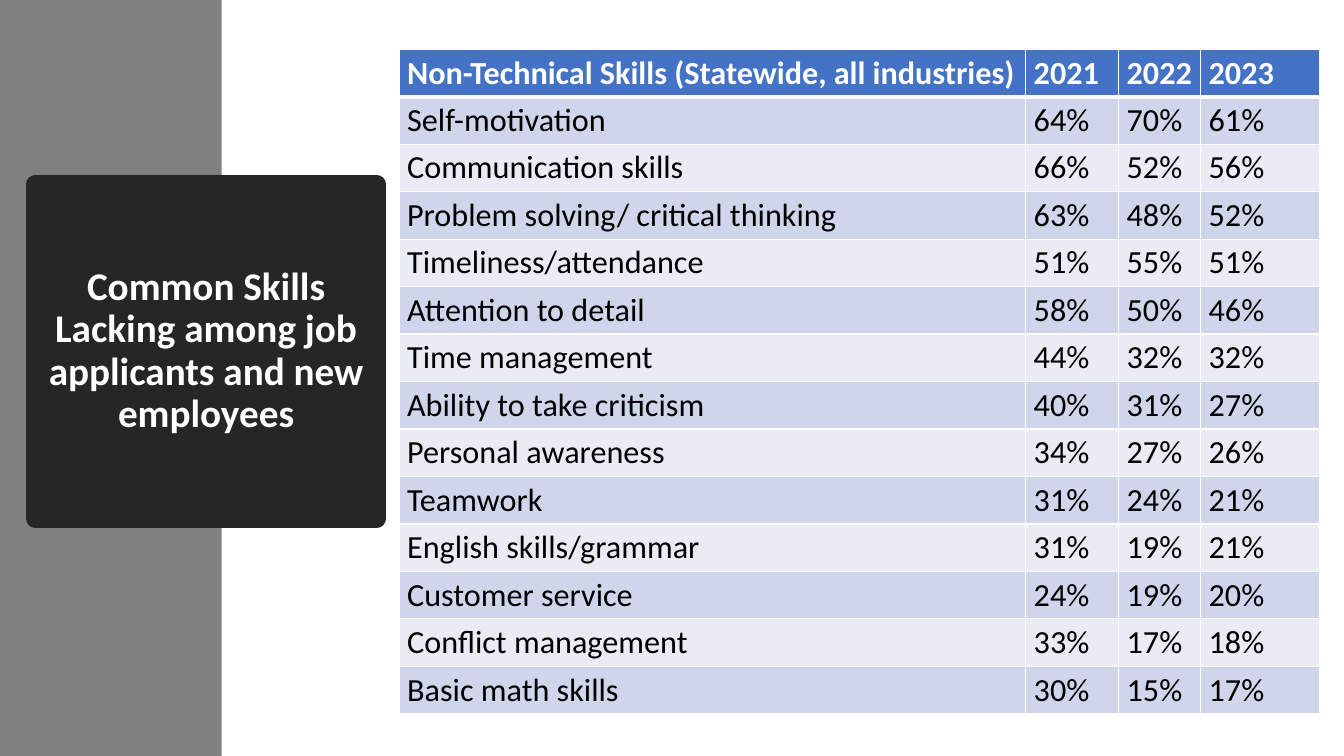
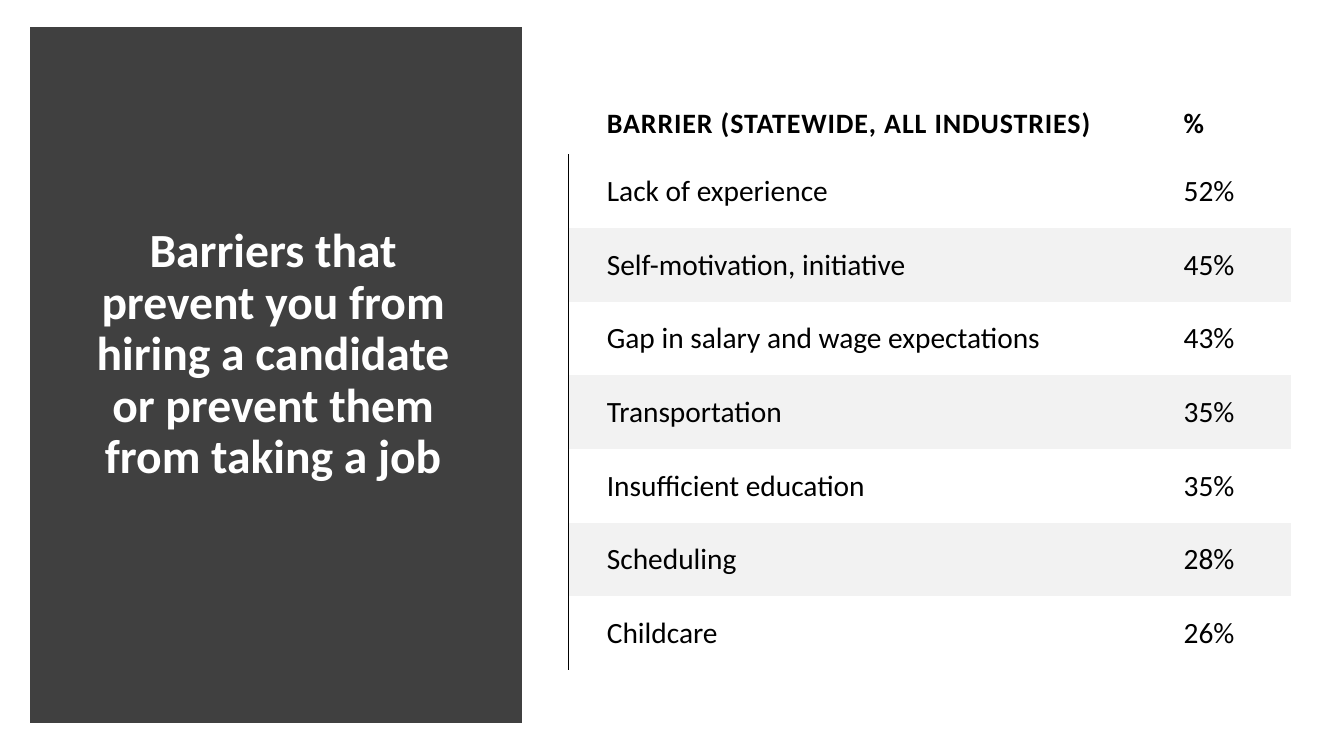
from dataclasses import dataclass, field
from typing import NamedTuple

from lxml.etree import SubElement
from pptx import Presentation
from pptx.dml.color import RGBColor
from pptx.enum.shapes import MSO_SHAPE
from pptx.enum.text import MSO_ANCHOR, MSO_AUTO_SIZE, PP_ALIGN
from pptx.oxml.ns import qn
from pptx.util import Pt


@dataclass(frozen=True)
class Theme:
    font: str = "Calibri"
    white: str = "FFFFFF"
    black: str = "000000"
    band: str = "7F7F7F"
    badge: str = "262626"
    panel: str = "404040"
    header: str = "4472C4"
    stripes: tuple = ("CFD5EA", "E9EBF5")
    barrier_stripes: tuple = (None, "F2F2F2")
    badge_size: float = 28
    panel_size: float = 34
    skill_size: float = 23
    barrier_header_size: float = 20
    barrier_size: float = 21
    plain_table: str = "{2D5ABB26-0587-4C30-8999-92F81FD0307C}"


THEME = Theme()


class Box(NamedTuple):
    left: float
    top: float
    width: float
    height: float

    def inset(self, left, top, width, height):
        """Return a box of the given size, offset from this box's corner."""
        return Box(self.left + left, self.top + top, width, height)

    def points(self):
        return [Pt(value) for value in self]


@dataclass
class CellStyle:
    size: float
    color: str
    margins: tuple
    bold: bool = False
    fill: str | None = None
    anchor: MSO_ANCHOR = MSO_ANCHOR.TOP
    tracking: int = 0
    borders: dict = field(default_factory=dict)


PAGE = Box(0, 0, 960, 540)

SKILLS = [
    ("Non-Technical Skills (Statewide, all industries)", "2021", "2022", "2023"),
    ("Self-motivation", "64%", "70%", "61%"),
    ("Communication skills", "66%", "52%", "56%"),
    ("Problem solving/ critical thinking", "63%", "48%", "52%"),
    ("Timeliness/attendance", "51%", "55%", "51%"),
    ("Attention to detail", "58%", "50%", "46%"),
    ("Time management", "44%", "32%", "32%"),
    ("Ability to take criticism", "40%", "31%", "27%"),
    ("Personal awareness", "34%", "27%", "26%"),
    ("Teamwork", "31%", "24%", "21%"),
    ("English skills/grammar", "31%", "19%", "21%"),
    ("Customer service", "24%", "19%", "20%"),
    ("Conflict management", "33%", "17%", "18%"),
    ("Basic math skills", "30%", "15%", "17%"),
]

BARRIERS = [
    ("BARRIER (STATEWIDE, ALL INDUSTRIES)", "%"),
    ("Lack of experience", "52%"),
    ("Self-motivation, initiative", "45%"),
    ("Gap in salary and wage expectations", "43%"),
    ("Transportation", "35%"),
    ("Insufficient education", "35%"),
    ("Scheduling", "28%"),
    ("Childcare", "26%"),
]


def apply(target, **values):
    for name, value in values.items():
        setattr(target, name, value)


def set_font(font, size, color, bold):
    apply(font, name=THEME.font, size=Pt(size), bold=bold)
    font.color.rgb = RGBColor.from_string(color)


def paint(shape, color, line_width=0):
    """Fill a shape and outline it in the same colour, if it has a line."""
    shape.fill.solid()
    shape.fill.fore_color.rgb = RGBColor.from_string(color)
    if line_width:
        shape.line.color.rgb = RGBColor.from_string(color)
        shape.line.width = Pt(line_width)
    else:
        shape.line.fill.background()


def add_panel(page, box, color, line_width=0):
    """Draw a square-cornered panel behind the title."""
    panel = page.shapes.add_shape(MSO_SHAPE.RECTANGLE, *box.points())
    panel.shadow.inherit = False
    paint(panel, color, line_width)
    if line_width:
        SubElement(panel.element.spPr.find(qn("a:ln")), qn("a:miter"), lim="800000")
    page.shapes.title.element.addprevious(panel.element)


def set_title(page, box, text, size):
    title = page.shapes.title
    apply(title, **dict(zip(("left", "top", "width", "height"), box.points())))
    frame = title.text_frame
    frame.text = text
    apply(frame, word_wrap=True, auto_size=MSO_AUTO_SIZE.NONE,
          vertical_anchor=MSO_ANCHOR.MIDDLE)
    para = frame.paragraphs[0]
    apply(para, alignment=PP_ALIGN.CENTER, line_spacing=0.9)
    set_font(para.runs[0].font, size, THEME.white, True)
    return title


def add_border(properties, side, color, width):
    line = SubElement(properties, qn(f"a:ln{side}"), w=str(Pt(width)))
    fill = SubElement(line, qn("a:solidFill"))
    SubElement(fill, qn("a:srgbClr"), val=color)


def fill_cell(cell, text, style):
    cell.text = text
    names = ("margin_left", "margin_top", "margin_right", "margin_bottom")
    apply(cell, **dict(zip(names, map(Pt, style.margins))))
    cell.vertical_anchor = style.anchor
    span = cell.text_frame.paragraphs[0].runs[0]
    set_font(span.font, style.size, style.color, style.bold)
    if style.tracking:
        span._r.get_or_add_rPr().set("spc", str(style.tracking))
    for side in "LRTB":
        if side in style.borders:
            add_border(cell._tc.get_or_add_tcPr(), side, *style.borders[side])
    if style.fill:
        cell.fill.solid()
        cell.fill.fore_color.rgb = RGBColor.from_string(style.fill)
    else:
        cell.fill.background()


def add_grid(page, box, rows, widths, header_height, style_for):
    """Add a table; style_for(row, column) gives the style of each cell."""
    frame = page.shapes.add_table(len(rows), len(widths), *box.points())
    next(frame.element.iter(qn("a:tableStyleId"))).text = THEME.plain_table
    table = frame.table
    apply(table, first_row=False, horz_banding=False)
    for column, width in zip(table.columns, widths):
        column.width = Pt(width)
    body_height = (box.height - header_height) / (len(rows) - 1)
    for row, texts in enumerate(rows):
        table.rows[row].height = Pt(body_height if row else header_height)
        for column, text in enumerate(texts):
            fill_cell(table.cell(row, column), text, style_for(row, column))


def skill_style(row, column):
    borders = {side: (THEME.white, 1) for side in "LRTB"}
    if row < 2:
        borders["T" if row else "B"] = (THEME.white, 3)
    return CellStyle(
        size=THEME.skill_size,
        color=THEME.black if row else THEME.white,
        margins=(5.7, 2.85, 5.7, 2.85),
        bold=row == 0,
        fill=THEME.stripes[(row - 1) % 2] if row else THEME.header,
        borders=borders,
    )


def barrier_style(row, column):
    if row == 0:
        return CellStyle(THEME.barrier_header_size, THEME.black,
                         (27.4, 9.4, 20.9, 9.4), bold=True,
                         anchor=MSO_ANCHOR.BOTTOM, tracking=60)
    return CellStyle(THEME.barrier_size, THEME.black, (27.4, 13.7, 20.9, 9.4),
                     fill=THEME.barrier_stripes[(row - 1) % 2],
                     borders={} if column else {"L": (THEME.black, 1)})


def build_skills(page, box):
    add_panel(page, box.inset(0, 0, 158.4, box.height), THEME.band)
    title = set_title(page, box.inset(25.2, 131.8, 244, 238.3),
                      "Common Skills Lacking among job applicants and new employees",
                      THEME.badge_size)
    paint(title, THEME.badge, 13.75)
    widths = (447.6, 66.4, 58.6, 85)
    row_height = 33.9
    grid = box.inset(285.1, 35.2, sum(widths), row_height * len(SKILLS))
    add_grid(page, grid, SKILLS, widths, row_height, skill_style)


def build_barriers(page, box):
    add_panel(page, box.inset(26.6, 24.5, 341.3, 486.7), THEME.panel, 10)
    set_title(page, box.inset(58.3, 58.3, 273.6, 391),
              "Barriers that prevent you from hiring a candidate "
              "or prevent them from taking a job", THEME.panel_size)
    widths = (412, 104)
    grid = box.inset(406.1, 66.8, sum(widths), 410.3)
    add_grid(page, grid, BARRIERS, widths, 41.8, barrier_style)


def main():
    deck = Presentation()
    apply(deck, slide_width=Pt(PAGE.width), slide_height=Pt(PAGE.height))
    title_only = deck.slide_layouts[5]
    for build in (build_skills, build_barriers):
        build(deck.slides.add_slide(title_only), PAGE)
    deck.save("out.pptx")


if __name__ == "__main__":
    main()
